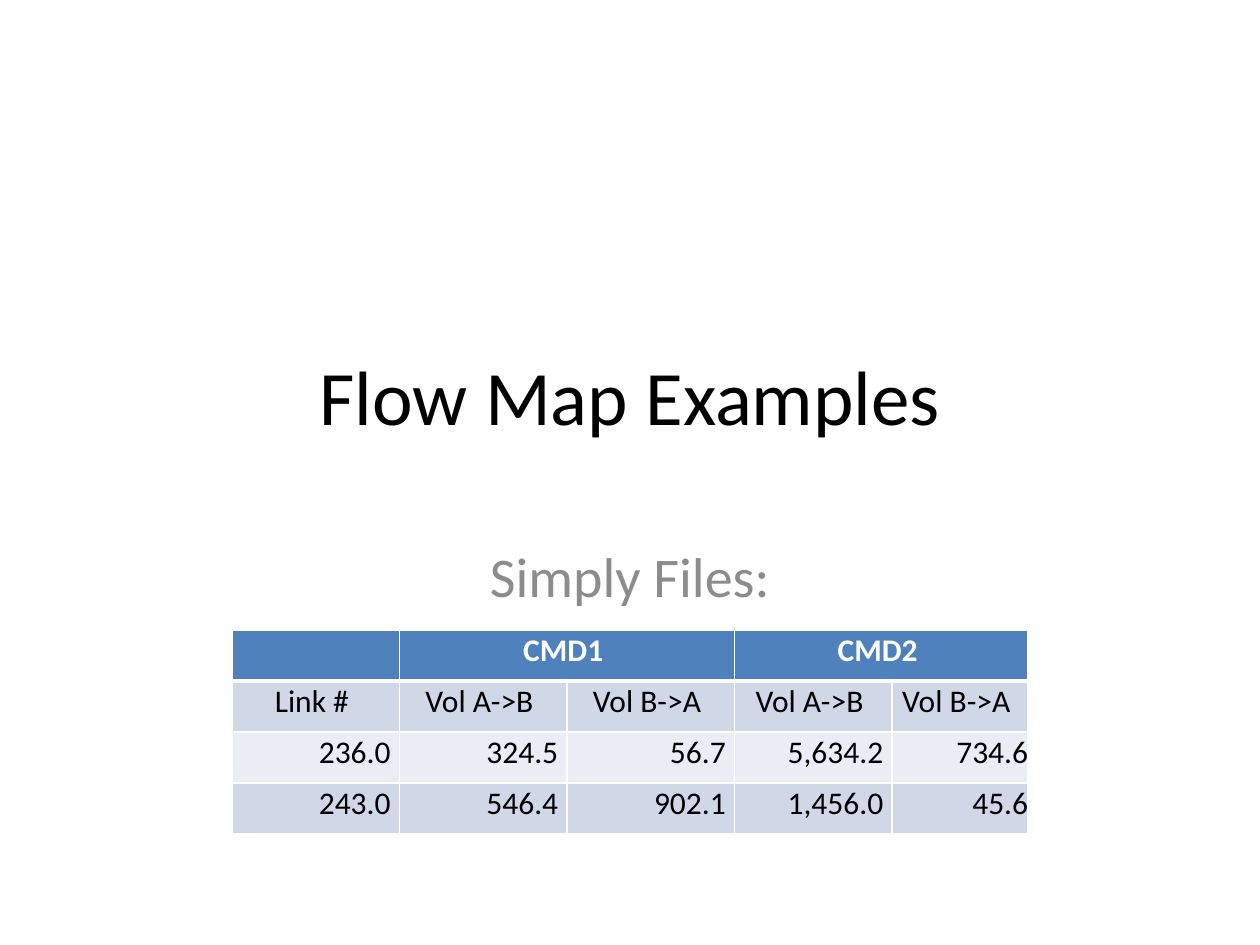
from lxml import etree
from pptx import Presentation
from pptx.dml.color import RGBColor
from pptx.enum.text import MSO_ANCHOR, PP_ALIGN
from pptx.oxml.ns import qn
from pptx.util import Inches, Pt

CENTER, RIGHT = PP_ALIGN.CENTER, PP_ALIGN.RIGHT
MIDDLE, TOP = MSO_ANCHOR.MIDDLE, MSO_ANCHOR.TOP
FONT = "Calibri"
COLORS = {
    "text": "000000",
    "muted": "8C8C8C",
    "white": "FFFFFF",
    "header": "4F81BD",
    "band_dark": "D0D8E8",
    "band_light": "E9EDF4",
}
COLUMN_WIDTHS = [1.33, 1.33, 1.33, 1.25, 1.08]
ROW_HEIGHT = 0.405
VOLUMES = [
    ["", "CMD1", "", "CMD2", ""],
    ["Link #", "Vol A->B", "Vol B->A", "Vol A->B", "Vol B->A"],
    ["236.0", "324.5", "56.7", "5,634.2", "734.6"],
    ["243.0", "546.4", "902.1", "1,456.0", "45.6"],
]
ROW_FILLS = ["header", "band_dark", "band_light", "band_dark"]


def write(frame, text, size, color, align, bold=False):
    paragraph = frame.paragraphs[0]
    paragraph.alignment = align
    run = paragraph.add_run()
    run.text = text
    run.font.name = FONT
    run.font.size = Pt(size)
    run.font.bold = bold
    run.font.color.rgb = RGBColor.from_string(COLORS[color])


def fill_heading(heading, box, text, size, color, anchor):
    heading.left, heading.top, heading.width, heading.height = map(Inches, box)
    heading.text_frame.vertical_anchor = anchor
    write(heading.text_frame, text, size, color, CENTER)


def set_borders(cell, top, bottom):
    properties = cell._tc.get_or_add_tcPr()
    widths = {"lnL": 1, "lnR": 1, "lnT": top, "lnB": bottom}
    for position, (side, width) in enumerate(widths.items()):
        line = etree.Element(qn(f"a:{side}"), w=str(Pt(width)))
        solid = etree.SubElement(line, qn("a:solidFill"))
        etree.SubElement(solid, qn("a:srgbClr"), val=COLORS["white"])
        properties.insert(position, line)


def add_volume_table(slide, box):
    rows, columns = len(VOLUMES), len(COLUMN_WIDTHS)
    table = slide.shapes.add_table(rows, columns, *map(Inches, box)).table
    for column, width in zip(table.columns, COLUMN_WIDTHS):
        column.width = Inches(width)
    for row, values in enumerate(VOLUMES):
        table.rows[row].height = Inches(ROW_HEIGHT)
        is_header, is_number = row == 0, row >= 2
        for column, value in enumerate(values):
            cell = table.cell(row, column)
            flush = is_number and column == columns - 1
            cell.margin_left = cell.margin_top = Inches(0.01)
            cell.margin_right = Inches(0 if flush else 0.07)
            cell.margin_bottom = 0
            cell.fill.solid()
            cell.fill.fore_color.rgb = RGBColor.from_string(COLORS[ROW_FILLS[row]])
            set_borders(cell, 3 if row == 1 else 1, 3 if is_header else 1)
            if value:
                write(cell.text_frame, value, 18, "white" if is_header else "text",
                      RIGHT if is_number else CENTER, is_header)
    for first in (1, 3):
        table.cell(0, first).merge(table.cell(0, first + 1))


def main():
    presentation = Presentation()
    presentation.slide_width, presentation.slide_height = Inches(10), Inches(7.5)
    slide = presentation.slides.add_slide(presentation.slide_layouts[0])
    fill_heading(slide.shapes.title, (0.75, 2.33, 8.5, 1.61),
                 "Flow Map Examples", 44, "text", MIDDLE)
    fill_heading(slide.placeholders[1], (1.5, 4.25, 7, 1.92),
                 "Simply Files:", 32, "muted", TOP)
    add_volume_table(slide, (1.84, 5, sum(COLUMN_WIDTHS), ROW_HEIGHT * len(VOLUMES)))
    presentation.save("out.pptx")


if __name__ == "__main__":
    main()
